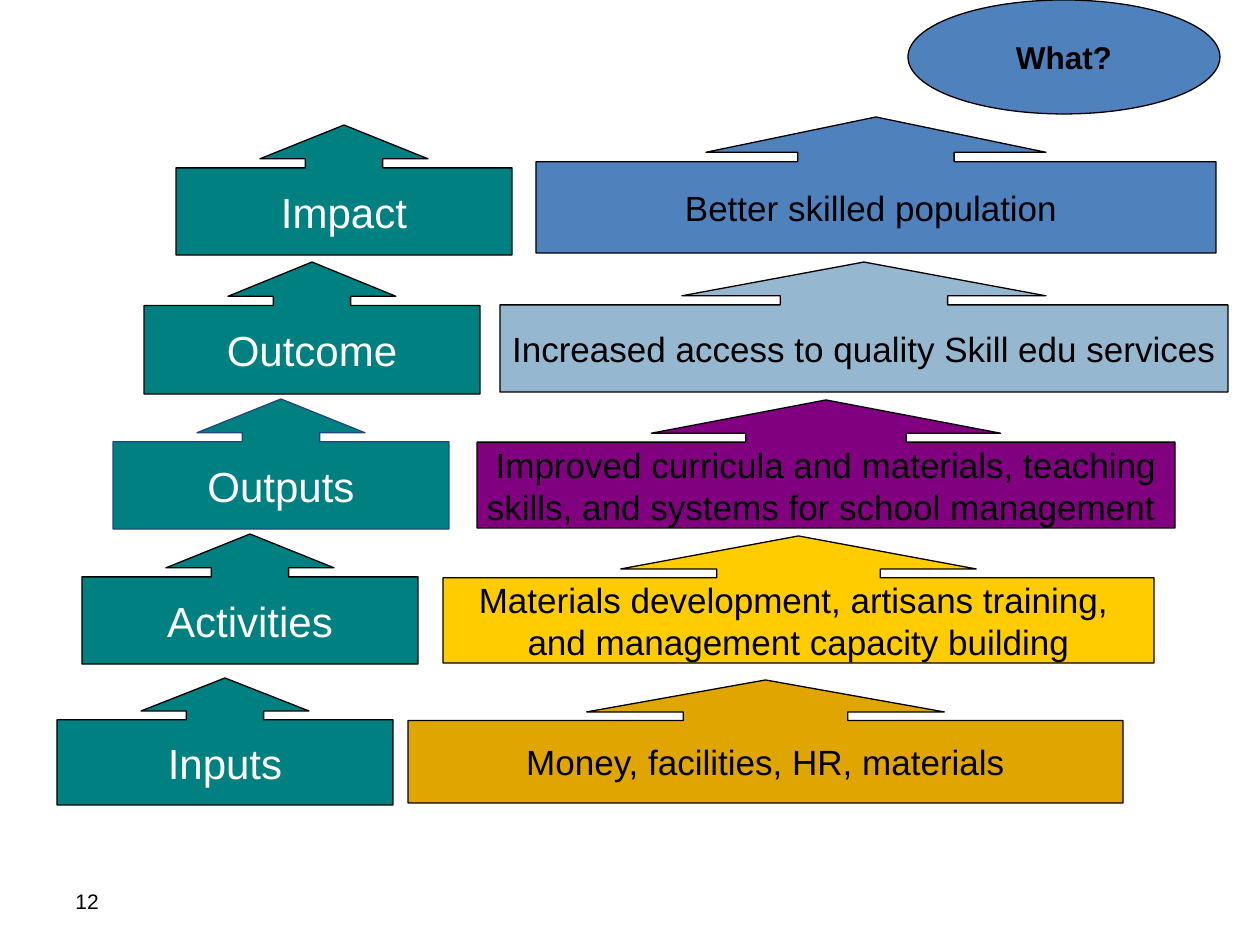
from dataclasses import dataclass

from pptx import Presentation
from pptx import util as u
from pptx.dml.color import RGBColor
from pptx.enum import shapes, text

PX = 914400 / 126


@dataclass(frozen=True)
class Theme:
    font: str = "Arial"
    dark: str = "000000"
    light: str = "FFFFFF"
    stage: str = "008080"
    outline: str = "000000"
    outline_soft: str = "1F497D"
    accent: str = "4F81BD"
    stage_size: int = 24
    detail_size: int = 20
    heading_size: int = 18
    number_size: int = 12


THEME = Theme()

# Results chain, top to bottom: name, box (left, top, width, height) and outline,
# then the detail lines with their box and fill
STAGES = [
    ("Impact", (176, 125, 336, 130), THEME.outline,
     ["Better skilled population "], (536, 117, 680, 136), THEME.accent),
    ("Outcome", (144, 262, 336, 132), THEME.outline,
     ["Increased access to quality Skill edu services"], (500, 262, 728, 130), "96B7D0"),
    ("Outputs", (113, 399, 336, 130), THEME.outline_soft,
     ["Improved curricula and materials, teaching",
      "skills, and systems for school management "], (477, 400, 698, 128), "800080"),
    ("Activities", (82, 534, 336, 130), THEME.outline,
     ["Materials development, artisans training, ",
      "and management capacity building"], (443, 536, 711, 127), "FFCC00"),
    ("Inputs", (57, 678, 336, 127), THEME.outline,
     ["Money, facilities, HR, materials"], (408, 680, 715, 123), "E0A500"),
]
HEADING = ("What?", (908, 0, 312, 114))
SLIDE_NUMBER = ("12", (63, 876, 294, 50))

# Arrow proportions: shaft and half head against width, the rest against height
SHAFT, HALF_HEAD, HEAD_LENGTH, BOX_HEIGHT = 0.23, 0.25, 0.26, 0.67


def emu(box):
    return [u.Emu(round(value * PX)) for value in box]


def write(shape, lines, size, color, align=text.PP_ALIGN.CENTER, bold=False):
    frame = shape.text_frame
    frame.word_wrap = False
    frame.vertical_anchor = text.MSO_ANCHOR.MIDDLE
    frame.text = "\n".join(lines)
    for paragraph in frame.paragraphs:
        paragraph.alignment = align
        paragraph.font.name = THEME.font
        paragraph.font.size = u.Pt(size)
        paragraph.font.bold = bold
        paragraph.font.color.rgb = RGBColor.from_string(color)


def add_filled(slide, kind, box, fill, outline=THEME.outline):
    shape = slide.shapes.add_shape(kind, *emu(box))
    shape.shadow.inherit = False
    shape.fill.solid()
    shape.fill.fore_color.rgb = RGBColor.from_string(fill)
    shape.line.color.rgb = RGBColor.from_string(outline)
    shape.line.width = u.Pt(0.75)
    return shape


def add_callout(slide, box, fill, outline=THEME.outline):
    shape = add_filled(slide, shapes.MSO_SHAPE.UP_ARROW_CALLOUT, box, fill, outline)
    ratio = box[2] / box[3]
    values = (SHAFT * ratio, HALF_HEAD * ratio, HEAD_LENGTH, BOX_HEIGHT)
    for index, value in enumerate(values):
        shape.adjustments[index] = value
    return shape


def main():
    presentation = Presentation()
    presentation.slide_width = u.Inches(10)
    presentation.slide_height = u.Inches(7.5)
    slide = presentation.slides.add_slide(presentation.slide_layouts[6])

    # Slide number
    number, box = SLIDE_NUMBER
    write(slide.shapes.add_textbox(*emu(box)), [number], THEME.number_size,
          THEME.dark, text.PP_ALIGN.LEFT)

    # Stage names on the left, details on the right
    for name, name_box, outline, lines, detail_box, fill in STAGES:
        stage = add_callout(slide, name_box, THEME.stage, outline)
        write(stage, [name], THEME.stage_size, THEME.light)
        detail = add_callout(slide, detail_box, fill)
        write(detail, lines, THEME.detail_size, THEME.dark)

    # Heading oval over the details
    heading, box = HEADING
    oval = add_filled(slide, shapes.MSO_SHAPE.OVAL, box, THEME.accent)
    write(oval, [heading], THEME.heading_size, THEME.dark, bold=True)

    presentation.save("out.pptx")


if __name__ == "__main__":
    main()
